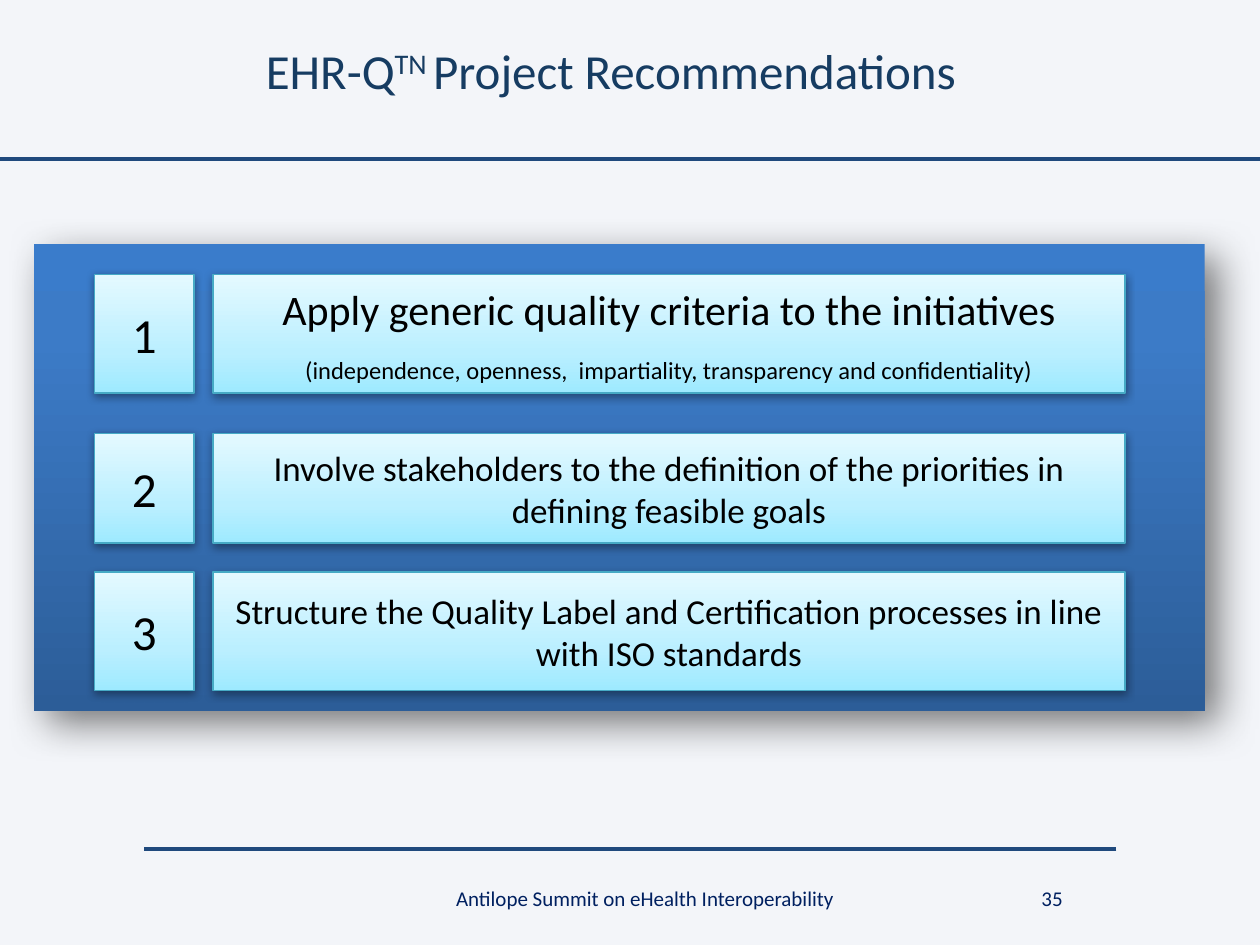
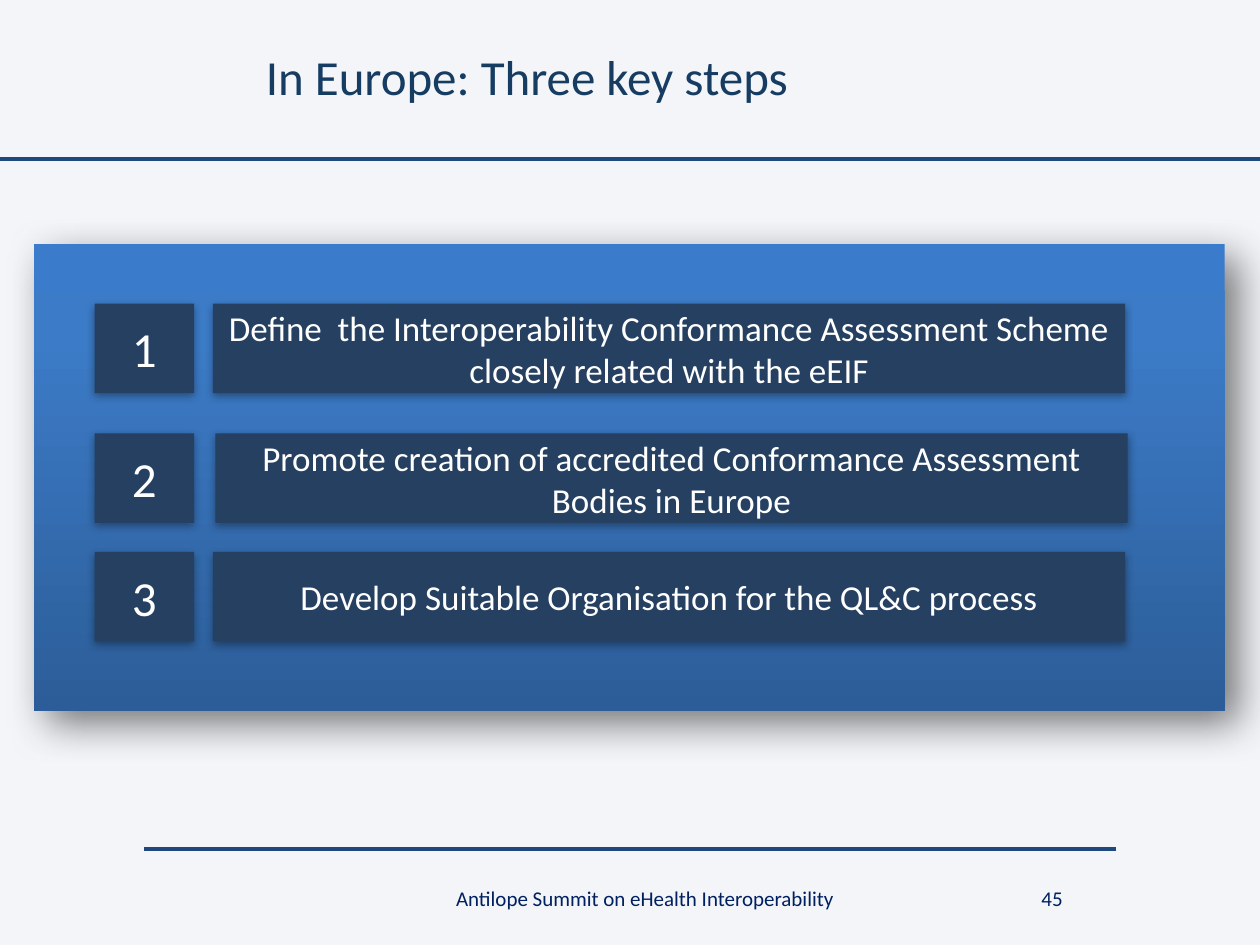
from lxml.etree import SubElement
from pptx import Presentation
from pptx.dml.color import RGBColor
from pptx.enum.shapes import MSO_CONNECTOR, MSO_SHAPE
from pptx.enum.text import MSO_ANCHOR, MSO_AUTO_SIZE, PP_ALIGN
from pptx.oxml.ns import qn
from pptx.util import Inches, Pt

FONT = "Calibri"
BACKGROUND, RULE, TITLE, FOOTER = "F3F5F9", "1F497D", "163C62", "002060"
FOOTER_TEXT = "Antilope Summit on eHealth Interoperability"

# Gradient: stops (percent, colour) and counterclockwise angle.
# Shadow: colour, opacity in percent, blur and distance in points, direction.
PANEL = {"gradient": ([(0, "3A7CCB"), (20, "3C7BC7"), (100, "2C5D98")], 270),
         "shadow": ("333333", 65, 23, 11, 45)}
LIGHT_BOX = {"gradient": ([(0, "9EEAFF"), (35, "BBEFFF"), (100, "E4F9FF")], 90),
             "line": "46AAC5", "text": "000000",
             "shadow": ("000000", 38, 5, 1.6, 90)}
DARK_BOX = {"fill": "254061", "text": "FFFFFF",
            "shadow": ("000000", 35, 5, 1.8, 90)}

PANEL_LEFT, PANEL_TOP, PANEL_HEIGHT = 0.27, 1.94, 3.7
NUMBER_LEFT, NUMBER_WIDTH = 0.75, 0.79
STEP_WIDTH = 7.24

# Title runs are (text, superscript); steps are (left, top, height, lines),
# and each line is (text, size).
SLIDES = [
    {"title": [("EHR-Q", False), ("TN ", True), ("Project Recommendations", False)],
     "title_box": (2.01, 0.16, 6.53, 0.79),
     "number": "35", "panel_width": 9.29, "style": LIGHT_BOX,
     "steps": [
         (1.69, 2.18, 0.94, [
             ("Apply generic quality criteria to the initiatives", 24),
             ("(independence, openness,  impartiality, transparency and confidentiality)", 14)]),
         (1.69, 3.44, 0.87, [
             ("Involve stakeholders to the definition of the priorities in "
              "defining feasible goals", 20)]),
         (1.69, 4.54, 0.94, [
             ("Structure the Quality Label and Certification processes in line "
              "with ISO standards", 20)])]},
    {"title": [("In Europe: Three key steps", False)],
     "title_box": (2.01, 0.05, 6.06, 1.1),
     "number": "45", "panel_width": 9.45, "style": DARK_BOX,
     "steps": [
         (1.69, 2.41, 0.71, [
             ("Define  the Interoperability Conformance Assessment "
              "Scheme closely related with the eEIF", 20)]),
         (1.71, 3.44, 0.71, [
             ("Promote creation of accredited Conformance Assessment "
              "Bodies in Europe", 20)]),
         (1.69, 4.38, 0.71, [
             ("Develop Suitable Organisation for the QL&C process", 20)])]},
]


def rgb(value):
    return RGBColor.from_string(value)


def add_box(slide, box, style, lines=()):
    """Add a styled rectangle with centred lines of (text, size)."""
    shape = slide.shapes.add_shape(MSO_SHAPE.RECTANGLE, *map(Inches, box))
    properties = shape._element.spPr
    if "gradient" in style:
        stops, angle = style["gradient"]
        shape.fill.gradient()
        shape.fill.gradient_angle = angle
        stop_list = properties.find(qn("a:gradFill")).find(qn("a:gsLst"))
        for stop in list(stop_list):
            stop_list.remove(stop)
        for position, color in stops:
            stop = SubElement(stop_list, qn("a:gs"), pos=str(position * 1000))
            SubElement(stop, qn("a:srgbClr"), val=color)
    else:
        shape.fill.solid()
        shape.fill.fore_color.rgb = rgb(style["fill"])
    if "line" in style:
        shape.line.color.rgb = rgb(style["line"])
        shape.line.width = Pt(0.75)
    else:
        shape.line.fill.background()

    color, opacity, blur, distance, direction = style["shadow"]
    shape.shadow.inherit = False
    shadow = SubElement(properties.find(qn("a:effectLst")), qn("a:outerShdw"),
                        blurRad=str(Pt(blur)), dist=str(Pt(distance)),
                        dir=str(direction * 60000), rotWithShape="0")
    shadow_color = SubElement(shadow, qn("a:srgbClr"), val=color)
    SubElement(shadow_color, qn("a:alpha"), val=str(opacity * 1000))

    frame = shape.text_frame
    frame.word_wrap = True
    frame.vertical_anchor = MSO_ANCHOR.MIDDLE
    for index, (text, size) in enumerate(lines):
        paragraph = frame.add_paragraph() if index else frame.paragraphs[0]
        paragraph.text = text
        paragraph.alignment = PP_ALIGN.CENTER
        paragraph.space_before = Pt(12 if index else 0)
        paragraph.font.name = FONT
        paragraph.font.size = Pt(size)
        paragraph.font.color.rgb = rgb(style["text"])


presentation = Presentation()
presentation.slide_width, presentation.slide_height = Inches(10), Inches(7.5)
master_fill = presentation.slide_master.background.fill
master_fill.solid()
master_fill.fore_color.rgb = rgb(BACKGROUND)
title_only = presentation.slide_layouts.get_by_name("Title Only")

for content in SLIDES:
    slide = presentation.slides.add_slide(title_only)

    for start, end, y in [(10, 0, 1.26), (8.86, 1.14, 6.74)]:
        rule = slide.shapes.add_connector(
            MSO_CONNECTOR.STRAIGHT, Inches(start), Inches(y), Inches(end), Inches(y))
        rule.line.color.rgb = rgb(RULE)
        rule.line.width = Pt(2.25)
        SubElement(rule._element.spPr, qn("a:effectLst"))

    title = slide.shapes.title
    title.left, title.top, title.width, title.height = map(Inches, content["title_box"])
    title.text_frame.auto_size = MSO_AUTO_SIZE.NONE
    title.text_frame.vertical_anchor = MSO_ANCHOR.MIDDLE
    paragraph = title.text_frame.paragraphs[0]
    paragraph.alignment = PP_ALIGN.LEFT
    paragraph.font.name = FONT
    paragraph.font.size = Pt(28)
    paragraph.font.color.rgb = rgb(TITLE)
    for text, superscript in content["title"]:
        run = paragraph.add_run()
        run.text = text
        if superscript:
            run._r.get_or_add_rPr().set("baseline", "30000")

    add_box(slide, (PANEL_LEFT, PANEL_TOP, content["panel_width"], PANEL_HEIGHT), PANEL)
    for number, (left, top, height, lines) in enumerate(content["steps"], start=1):
        add_box(slide, (NUMBER_LEFT, top, NUMBER_WIDTH, height),
                content["style"], [(str(number), 28)])
        add_box(slide, (left, top, STEP_WIDTH, height), content["style"], lines)

    for text, left, width in [(FOOTER_TEXT, 2.64, 4.96), (content["number"], 7.84, 1.02)]:
        footer = slide.shapes.add_textbox(
            Inches(left), Inches(6.98), Inches(width), Inches(0.4))
        footer.text_frame.word_wrap = True
        paragraph = footer.text_frame.paragraphs[0]
        paragraph.text = text
        paragraph.alignment = PP_ALIGN.CENTER
        paragraph.font.name = FONT
        paragraph.font.size = Pt(12)
        paragraph.font.color.rgb = rgb(FOOTER)

presentation.save("out.pptx")
